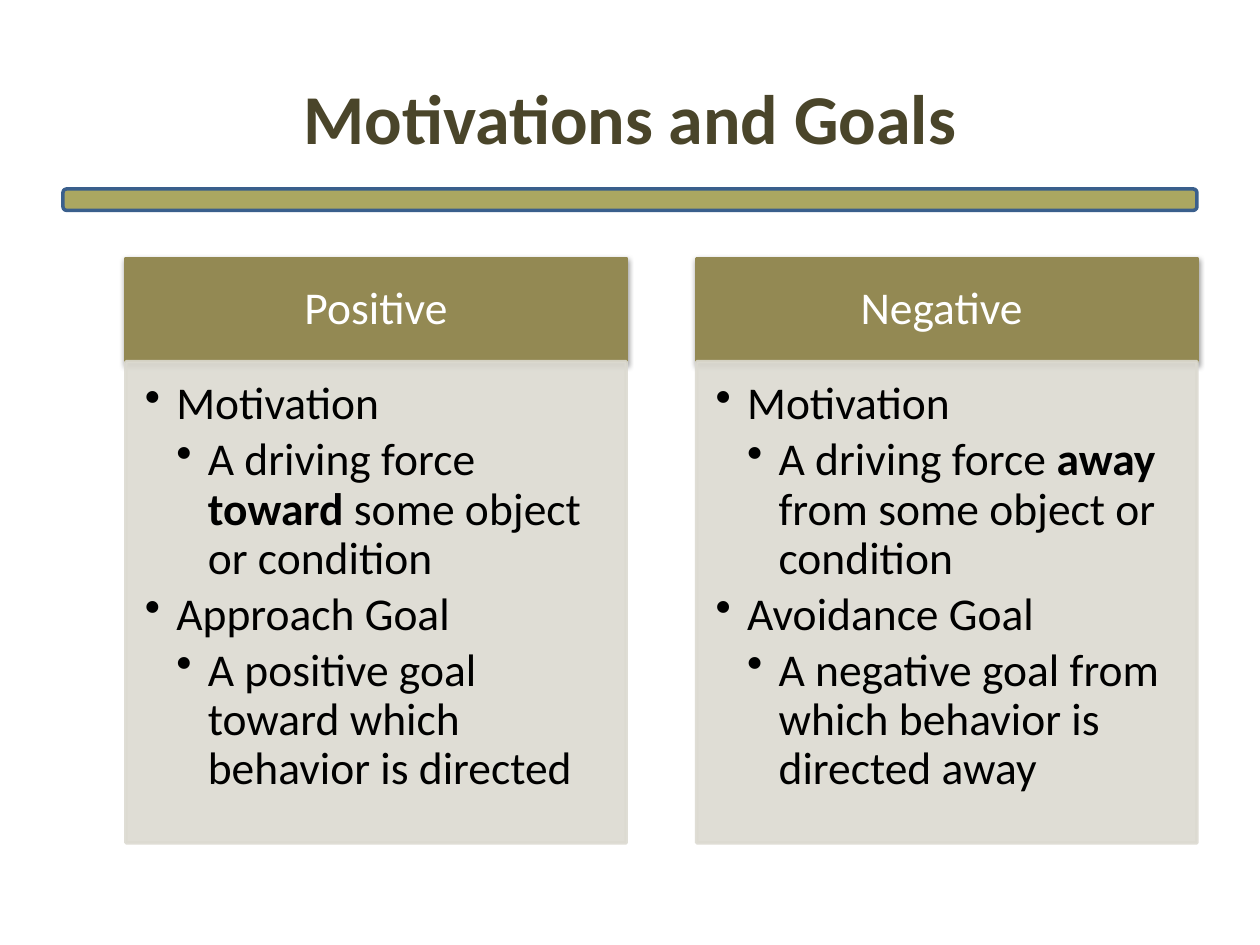
from dataclasses import dataclass

from pptx import Presentation
from pptx.dml.color import RGBColor
from pptx.enum.shapes import MSO_SHAPE as Shape
from pptx.enum.text import MSO_ANCHOR as Anchor, PP_ALIGN as Align
from pptx.oxml import parse_xml
from pptx.oxml.ns import nsdecls, qn
from pptx.util import Inches, Pt


@dataclass(frozen=True)
class Theme:
    font: str = "Calibri"
    title_size: int = 40
    body_size: int = 26
    title: str = "4A452A"
    bar: str = "ABA761"
    bar_line: str = "3A5F8C"
    header: str = "938953"
    panel: str = "DCDAD1"
    white: str = "FFFFFF"
    black: str = "000000"


theme = Theme()
TOP, HEADER_HEIGHT, PANEL_HEIGHT = 2.05, 0.82, 3.82
COLUMN_LEFT, COLUMN_WIDTH, COLUMN_STEP = 1, 3.97, 4.53
INDENT = 0.25

# Each column: heading, then bullets as (level, [(text, bold), ...])
columns = [
    ("Positive", [
        (1, [("Motivation", False)]),
        (2, [("A driving force ", False), ("toward", True),
             (" some object or condition", False)]),
        (1, [("Approach Goal", False)]),
        (2, [("A positive goal toward which behavior is directed", False)]),
    ]),
    ("Negative ", [
        (1, [("Motivation", False)]),
        (2, [("A driving force", False), (" away ", True),
             ("from some object or condition", False)]),
        (1, [("Avoidance Goal", False)]),
        (2, [("A negative goal from which behavior is directed away", False)]),
    ]),
]


def add_box(kind, left, top, width, height, fill, line, insets=(0, 0, 0, 0)):
    """Add a shape with a 2 pt line; insets are left, top, right, bottom."""
    shape = slide.shapes.add_shape(
        kind, Inches(left), Inches(top), Inches(width), Inches(height))
    shape.shadow.inherit = False
    shape.fill.solid()
    shape.fill.fore_color.rgb = RGBColor.from_string(fill)
    shape.line.color.rgb = RGBColor.from_string(line)
    shape.line.width = Pt(2)
    frame = shape.text_frame
    frame.word_wrap = True
    frame.margin_left, frame.margin_top, frame.margin_right, frame.margin_bottom = (
        Inches(inset) for inset in insets)
    return shape


def add_run(paragraph, text, size, color, bold=False):
    run = paragraph.add_run()
    run.text = text
    run.font.name = theme.font
    run.font.size = Pt(size)
    run.font.bold = bold
    run.font.color.rgb = RGBColor.from_string(color)


presentation = Presentation()
presentation.slide_width = Inches(10)
presentation.slide_height = Inches(7.5)
slide = presentation.slides.add_slide(presentation.slide_layouts[5])

title = slide.shapes.title
title.left, title.top = Inches(0.5), Inches(0.3)
title.width, title.height = Inches(9), Inches(1.25)
title.text_frame.vertical_anchor = Anchor.MIDDLE
paragraph = title.text_frame.paragraphs[0]
paragraph.alignment = Align.CENTER
add_run(paragraph, "Motivations and Goals", theme.title_size, theme.title, True)

add_box(Shape.ROUNDED_RECTANGLE, 0.5, 1.5, 9, 0.17, theme.bar, theme.bar_line)

for index, (heading, bullets) in enumerate(columns):
    left = COLUMN_LEFT + index * COLUMN_STEP

    header = add_box(Shape.RECTANGLE, left, TOP, COLUMN_WIDTH, HEADER_HEIGHT,
                     theme.header, theme.header, (0.2, 0.12, 0.2, 0.12))
    header._element.spPr.find(qn("a:effectLst")).append(parse_xml(
        f'<a:outerShdw {nsdecls("a")} blurRad="{Pt(3.1)}" dist="{Pt(1.6)}" '
        f'dir="5400000" rotWithShape="0"><a:srgbClr val="{theme.black}">'
        '<a:alpha val="38000"/></a:srgbClr></a:outerShdw>'))
    header.text_frame.vertical_anchor = Anchor.MIDDLE
    paragraph = header.text_frame.paragraphs[0]
    paragraph.alignment = Align.CENTER
    paragraph.line_spacing = 0.9
    add_run(paragraph, heading, theme.body_size, theme.white)

    panel = add_box(Shape.RECTANGLE, left, TOP + HEADER_HEIGHT, COLUMN_WIDTH,
                    PANEL_HEIGHT, theme.panel, theme.panel, (0.15, 0.15, 0.2, 0.23))
    for color in panel._element.spPr.iter(qn("a:srgbClr")):
        color.append(parse_xml(f'<a:alpha {nsdecls("a")} val="90000"/>'))
    frame = panel.text_frame
    frame.vertical_anchor = Anchor.TOP
    for number, (level, runs) in enumerate(bullets):
        paragraph = frame.add_paragraph() if number else frame.paragraphs[0]
        paragraph.alignment = Align.LEFT
        paragraph.level = level
        paragraph.line_spacing = 0.9
        paragraph.space_after = Pt(4)
        properties = paragraph._p.get_or_add_pPr()
        properties.set("marL", str(Inches(INDENT * level)))
        properties.set("indent", str(-Inches(INDENT)))
        properties.append(parse_xml(f'<a:buChar {nsdecls("a")} char="•"/>'))
        for text, bold in runs:
            add_run(paragraph, text, theme.body_size, theme.black, bold)

presentation.save("out.pptx")
